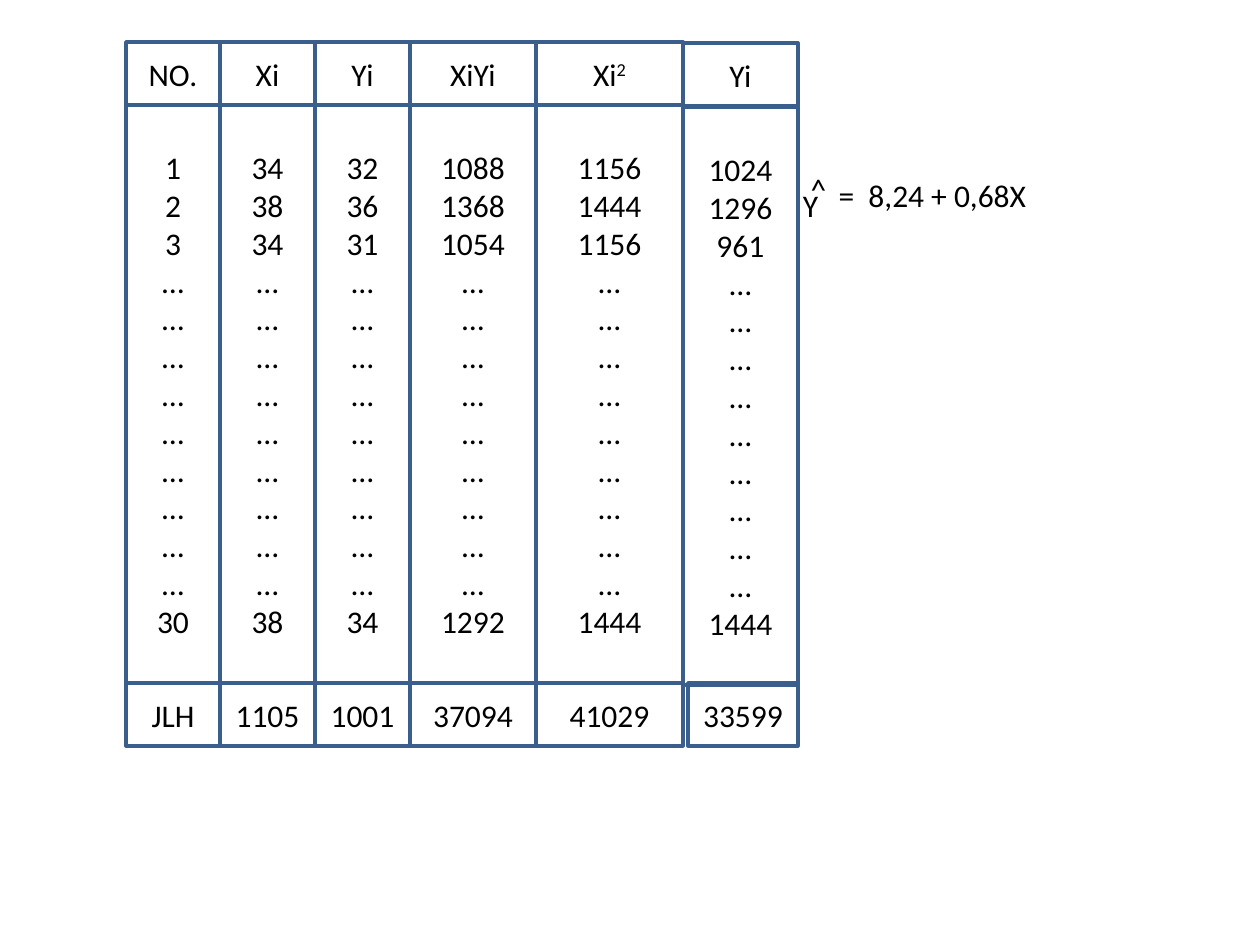
from pptx import Presentation
from pptx.dml.color import RGBColor
from pptx.enum.shapes import MSO_SHAPE
from pptx.enum.text import MSO_ANCHOR, PP_ALIGN
from pptx.util import Emu, Pt

PX = 914400 // 126
LINE, INK = "3A5F8C", "000000"
INSET = 12

# Columns: heading, superscript, first values, last value, total
COLUMNS = [
    ("NO.", "", ["1", "2", "3"], "30", "JLH"),
    ("Xi", "", ["34", "38", "34"], "38", "1105"),
    ("Yi", "", ["32", "36", "31"], "34", "1001"),
    ("XiYi", "", ["1088", "1368", "1054"], "1292", "37094"),
    ("Xi", "2", ["1156", "1444", "1156"], "1444", "41029"),
    ("Yi", "", ["1024", "1296", "961"], "1444", "33599"),
]
SKIPPED = ["…"] * 9
COLUMN_EDGES = [126, 220, 315, 410, 536, 683, 798]
ROW_EDGES = [42, 105, 683, 746]
# The last column sits slightly off the grid: left and top shift per row
LAST_COLUMN_SHIFTS = [(0, 1), (0, 2), (5, 0)]

# Regression equation: text, box, left and right inset
EQUATION = [
    ("Y", (777, 168, 74, 73), 12, 19),
    ("^", (798, 168, 32, 42), 9, 0),
    ("=  8,24 + 0,68X", (819, 158, 242, 73), 12, 27),
]


def color(value):
    return RGBColor.from_string(value)


def box_of(values):
    return [Emu(value * PX) for value in values]


def write(shape, lines, superscript="", left=INSET, right=INSET):
    frame = shape.text_frame
    settings = {
        "word_wrap": True,
        "vertical_anchor": MSO_ANCHOR.MIDDLE,
        "margin_left": Emu(left * PX),
        "margin_right": Emu(right * PX),
    }
    for name, value in settings.items():
        setattr(frame, name, value)
    frame.text = "\n".join(lines)
    if superscript:
        run = frame.paragraphs[0].add_run()
        run.text = superscript
        run._r.get_or_add_rPr().set("baseline", "30000")
    for paragraph in frame.paragraphs:
        paragraph.alignment = PP_ALIGN.CENTER
        for run in paragraph.runs:
            for name, value in {"name": "Calibri", "size": Pt(18)}.items():
                setattr(run.font, name, value)
            run.font.color.rgb = color(INK)


def add_cell(slide, box, lines, superscript):
    cell = slide.shapes.add_shape(MSO_SHAPE.RECTANGLE, *box_of(box))
    cell.shadow.inherit = False
    cell.fill.background()
    cell.line.color.rgb = color(LINE)
    cell.line.width = Pt(2)
    write(cell, lines, superscript)


def main():
    presentation = Presentation()
    presentation.slide_width = Emu(1260 * PX)
    presentation.slide_height = Emu(945 * PX)
    slide = presentation.slides.add_slide(presentation.slide_layouts[6])

    # Data grid: heading, values and total of each column
    for index, (heading, superscript, first, last, total) in enumerate(COLUMNS):
        left, right = COLUMN_EDGES[index:index + 2]
        rows = [([heading], superscript), (first + SKIPPED + [last], ""), ([total], "")]
        for row, (lines, raised) in enumerate(rows):
            top, bottom = ROW_EDGES[row:row + 2]
            is_last = index == len(COLUMNS) - 1
            dx, dy = LAST_COLUMN_SHIFTS[row] if is_last else (0, 0)
            box = (left + dx, top + dy, right - left - dx, bottom - top)
            add_cell(slide, box, lines, raised)

    # Equation beside the grid
    for text, box, left, right in EQUATION:
        write(slide.shapes.add_textbox(*box_of(box)), [text], left=left, right=right)

    presentation.save("out.pptx")


if __name__ == "__main__":
    main()
